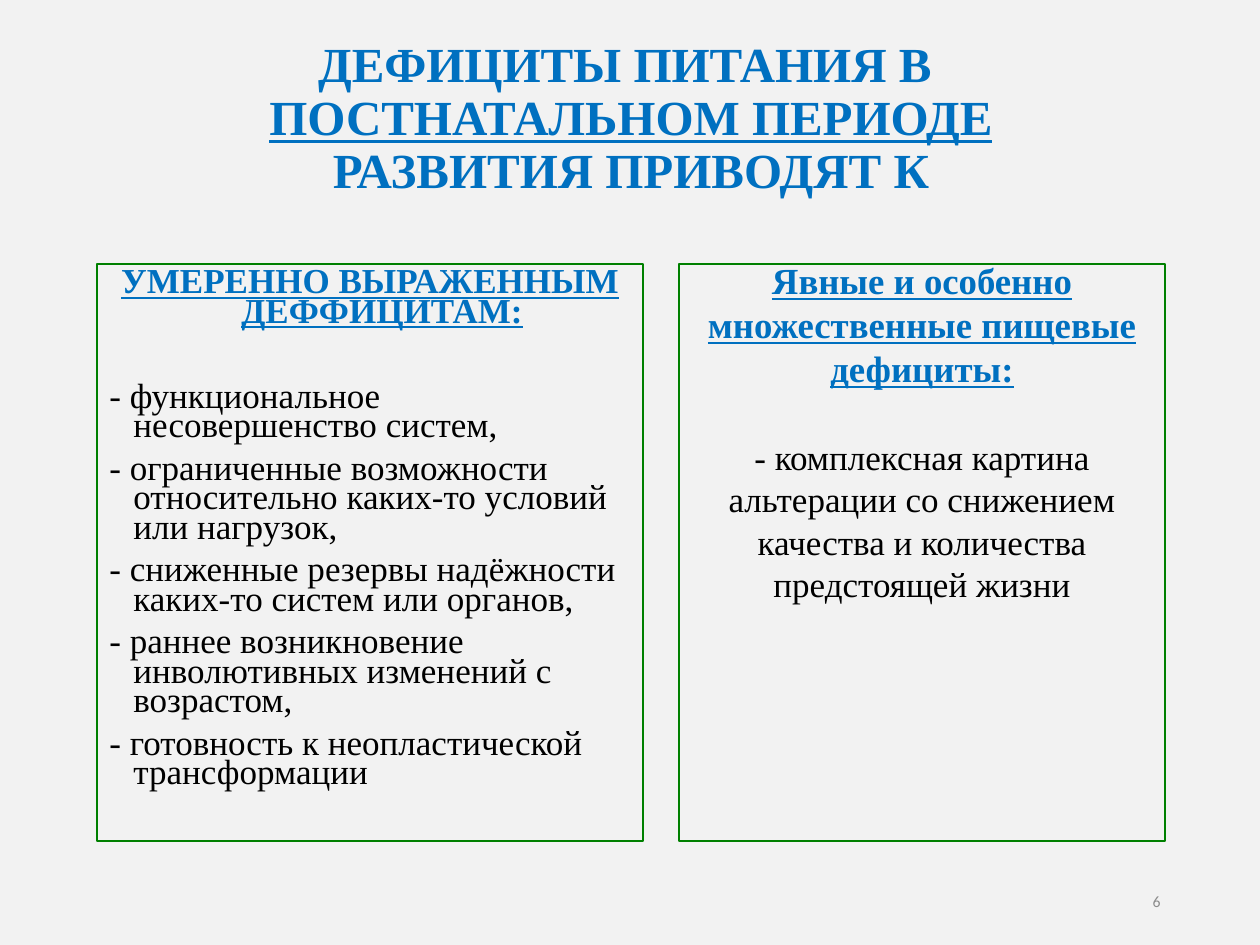
from pptx import Presentation
from pptx.dml.color import RGBColor
from pptx.enum.shapes import MSO_SHAPE
from pptx.enum.text import MSO_ANCHOR, MSO_AUTO_SIZE, PP_ALIGN
from pptx.util import Pt

CENTER, LEFT, RIGHT = PP_ALIGN.CENTER, PP_ALIGN.LEFT, PP_ALIGN.RIGHT
TOP, MIDDLE = MSO_ANCHOR.TOP, MSO_ANCHOR.MIDDLE
TITLE_ONLY = 5
EMU_PER_PX = 914400 / 126
SERIF, SANS = "Times New Roman", "Calibri"
BLUE, BLACK, GREEN, GRAY, PAPER = "0070C0", "000000", "008000", "8C8C8C", "F2F2F2"

TITLE_LINES = [
    ("ДЕФИЦИТЫ ПИТАНИЯ В ", False),
    ("ПОСТНАТАЛЬНОМ ПЕРИОДЕ", True),
    ("РАЗВИТИЯ ПРИВОДЯТ К", False),
]
PANEL_TOP, PANEL_HEIGHT = 264, 577
PANELS = [
    {
        "left": 97, "width": 546, "heading_size": 20, "gap": 32, "align": LEFT,
        "heading": ["УМЕРЕННО ВЫРАЖЕННЫМ ДЕФФИЦИТАМ:"],
        "body": [
            "- функциональное несовершенство систем,",
            "- ограниченные возможности относительно каких-то условий или нагрузок,",
            "- сниженные резервы надёжности каких-то систем или органов,",
            "- раннее возникновение инволютивных изменений с возрастом,",
            "- готовность к неопластической трансформации",
        ],
    },
    {
        "left": 679, "width": 486, "heading_size": 21, "gap": 33, "align": CENTER,
        "heading": ["Явные и особенно", "множественные пищевые", "дефициты:"],
        "body": [
            "- комплексная картина",
            "альтерации со снижением",
            "качества и количества",
            "предстоящей жизни",
        ],
    },
]


def px(value):
    return round(value * EMU_PER_PX)


def color(value):
    return RGBColor.from_string(value)


def add_text(paragraph, text, size=20, font=SERIF, fill=BLACK, bold=False, underline=False):
    run = paragraph.add_run()
    run.text = text
    run.font.size = Pt(size)
    run.font.name = font
    run.font.color.rgb = color(fill)
    run.font.bold = bold
    run.font.underline = underline


def prepare_frame(shape, anchor):
    frame = shape.text_frame
    frame.word_wrap = True
    frame.auto_size = MSO_AUTO_SIZE.NONE
    frame.vertical_anchor = anchor
    return frame


def add_title(slide):
    title = slide.shapes.title
    title.left, title.top, title.width, title.height = map(px, (64, 26, 1134, 188))
    paragraph = prepare_frame(title, MIDDLE).paragraphs[0]
    paragraph.alignment = CENTER
    paragraph.line_spacing = 0.9
    for index, (text, underline) in enumerate(TITLE_LINES):
        if index:
            paragraph.add_line_break()
        add_text(paragraph, text, size=28, fill=BLUE, bold=True, underline=underline)


def add_panel(slide, panel):
    box = slide.shapes.add_shape(
        MSO_SHAPE.RECTANGLE,
        *map(px, (panel["left"], PANEL_TOP, panel["width"], PANEL_HEIGHT)))
    box.shadow.inherit = False
    box.fill.background()
    box.line.color.rgb = color(GREEN)
    box.line.width = Pt(0.75)
    frame = prepare_frame(box, TOP)
    heading_count = len(panel["heading"])
    for index, text in enumerate(panel["heading"] + panel["body"]):
        paragraph = frame.add_paragraph() if index else frame.paragraphs[0]
        is_heading = index < heading_count
        paragraph.alignment = CENTER if is_heading else panel["align"]
        paragraph.line_spacing = 0.7
        if index:
            paragraph.space_before = Pt(panel["gap"] if index == heading_count else 7.5)
        properties = paragraph._p.get_or_add_pPr()
        properties.set("marL", str(px(24)))
        properties.set("indent", str(px(-24)))
        if is_heading:
            add_text(paragraph, text, size=panel["heading_size"], fill=BLUE,
                     bold=True, underline=True)
        else:
            add_text(paragraph, text)


def add_page_number(slide, number):
    box = slide.shapes.add_textbox(*map(px, (890, 876, 283, 50)))
    paragraph = prepare_frame(box, MIDDLE).paragraphs[0]
    paragraph.alignment = RIGHT
    add_text(paragraph, number, size=9, font=SANS, fill=GRAY)


def main():
    presentation = Presentation()
    presentation.slide_width, presentation.slide_height = px(1260), px(945)
    slide = presentation.slides.add_slide(presentation.slide_layouts[TITLE_ONLY])
    slide.background.fill.solid()
    slide.background.fill.fore_color.rgb = color(PAPER)
    add_title(slide)
    for panel in PANELS:
        add_panel(slide, panel)
    add_page_number(slide, "6")
    presentation.save("out.pptx")


if __name__ == "__main__":
    main()
